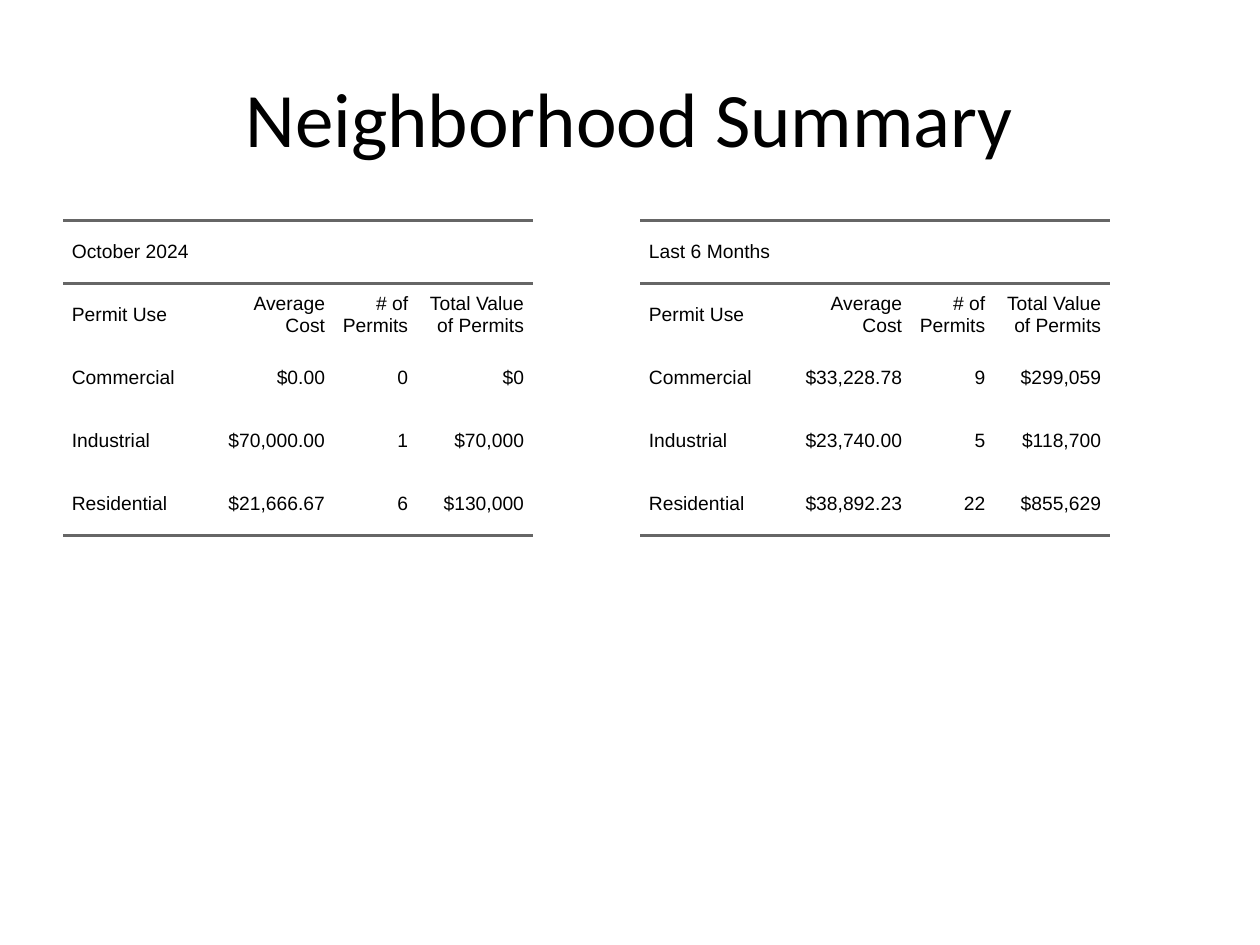
from dataclasses import dataclass

from pptx import Presentation
from pptx.dml.color import RGBColor
from pptx.enum.text import MSO_ANCHOR, PP_ALIGN
from pptx.oxml import parse_xml
from pptx.oxml.ns import nsdecls
from pptx.util import Inches, Pt


@dataclass(frozen=True)
class Theme:
    title_font: str = "Calibri"
    body_font: str = "Arial"
    title_size: int = 44
    body_size: int = 11
    ink: str = "000000"
    rule: str = "666666"
    rule_width: float = 1.5
    padding: float = 0.07
    spacing: int = 5


THEME = Theme()
WIDTH, HEIGHT = 10, 7.5
MARGIN = 0.5
TABLE_TOP = 1.75
TABLE_FRAME = 4.42  # each half of the page reserves this width
COLUMN_WIDTHS = (1.1, 1.05, 0.66, 0.92)
ROW_HEIGHT = 0.5
HEADINGS = ("Permit Use", "Average Cost", "# of Permits", "Total Value of Permits")
PERIODS = {
    "October 2024": (
        ("Commercial", "$0.00", "0", "$0"),
        ("Industrial", "$70,000.00", "1", "$70,000"),
        ("Residential", "$21,666.67", "6", "$130,000"),
    ),
    "Last 6 Months": (
        ("Commercial", "$33,228.78", "9", "$299,059"),
        ("Industrial", "$23,740.00", "5", "$118,700"),
        ("Residential", "$38,892.23", "22", "$855,629"),
    ),
}


def write_text(frame, text, *, font, size, align=PP_ALIGN.LEFT, spacing=0, indent=0):
    """Fill a text frame with one formatted paragraph."""
    para = frame.paragraphs[0]
    para.alignment = align
    para.space_before = para.space_after = Pt(spacing)
    if indent:
        properties = para._p.get_or_add_pPr()
        for side in ("marL", "marR"):
            properties.set(side, str(Inches(indent)))
        properties.set("indent", "0")
    span = para.add_run()
    span.text = text
    span.font.name = font
    span.font.size = Pt(size)
    span.font.color.rgb = RGBColor.from_string(THEME.ink)


def set_borders(cell, ruled_sides):
    """Rule the named sides of a cell and clear the others."""
    properties = cell._tc.get_or_add_tcPr()
    for position, side in enumerate("LRTB"):
        fill = "<a:noFill/>"
        if side in ruled_sides:
            fill = f'<a:solidFill><a:srgbClr val="{THEME.rule}"/></a:solidFill>'
        line = parse_xml(
            f'<a:ln{side} {nsdecls("a")} w="{Pt(THEME.rule_width)}">{fill}</a:ln{side}>'
        )
        properties.insert(position, line)


def add_title(page, text):
    title = page.shapes.title
    title.left, title.top = Inches(MARGIN), Inches(0.3)
    title.width, title.height = Inches(WIDTH - 2 * MARGIN), Inches(1.25)
    title.text_frame.vertical_anchor = MSO_ANCHOR.MIDDLE
    write_text(title.text_frame, text, font=THEME.title_font,
               size=THEME.title_size, align=PP_ALIGN.CENTER)


def add_permit_table(page, left, period, records):
    rows = [(period, "", "", ""), HEADINGS, *records]
    table = page.shapes.add_table(
        len(rows), len(COLUMN_WIDTHS), Inches(left), Inches(TABLE_TOP),
        Inches(sum(COLUMN_WIDTHS)), Inches(ROW_HEIGHT * len(rows)),
    ).table
    table.first_row = table.horz_banding = False
    for column, width in zip(table.columns, COLUMN_WIDTHS):
        column.width = Inches(width)

    for row_index, values in enumerate(rows):
        table.rows[row_index].height = Inches(ROW_HEIGHT)
        # Rules frame the two heading rows and close the table
        sides = "TB" if row_index < 2 else "B" if row_index == len(rows) - 1 else ""
        for column_index, value in enumerate(values):
            cell = table.cell(row_index, column_index)
            cell.fill.background()
            cell.vertical_anchor = MSO_ANCHOR.MIDDLE
            cell.margin_left = cell.margin_right = 0
            cell.margin_top = cell.margin_bottom = Inches(THEME.padding)
            set_borders(cell, sides)
            if value:
                write_text(cell.text_frame, value, font=THEME.body_font,
                           size=THEME.body_size, spacing=THEME.spacing,
                           indent=THEME.padding,
                           align=PP_ALIGN.RIGHT if column_index else PP_ALIGN.LEFT)

    # The period heading spans the table
    table.cell(0, 0).merge(table.cell(0, len(COLUMN_WIDTHS) - 1))


def main():
    deck = Presentation()
    deck.slide_width, deck.slide_height = Inches(WIDTH), Inches(HEIGHT)
    page = deck.slides.add_slide(deck.slide_layouts[5])
    lefts = (MARGIN, WIDTH - MARGIN - TABLE_FRAME)
    for left, (period, records) in zip(lefts, PERIODS.items()):
        add_permit_table(page, left, period, records)
    add_title(page, "Neighborhood Summary")
    deck.save("out.pptx")


if __name__ == "__main__":
    main()
